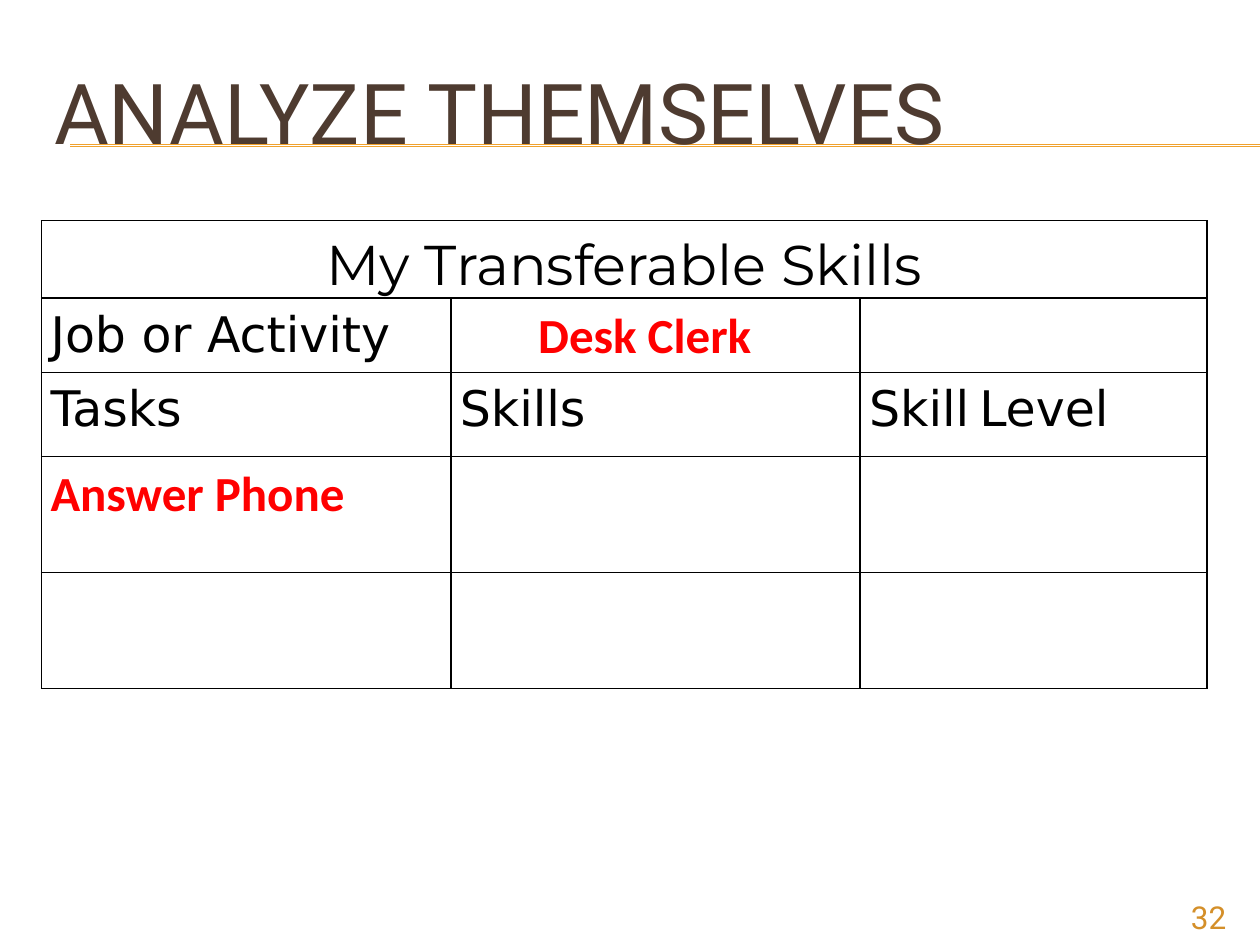
from lxml import etree
from pptx import Presentation
from pptx import util as u
from pptx.dml.color import RGBColor
from pptx.enum import shapes, text
from pptx.oxml.ns import qn

BLACK, RED, GOLD = "000000", "FF0000", "F0A22E"
COLUMNS = [8.25, 8.25, 6.99]
ROWS = [1.56, 1.5, 1.69, 2.34, 2.34]
# (row, column): text, font, size, colour, bold, centred
CELLS = {
    (0, 0): ("My Transferable Skills", "Montserrat", 32, BLACK, False, True),
    (1, 0): ("Job or Activity", "DejaVu Sans", 28, BLACK, False, False),
    (1, 1): ("Desk Clerk", "Calibri", 28, RED, True, True),
    (2, 0): ("Tasks", "DejaVu Sans", 28, BLACK, False, False),
    (2, 1): ("Skills", "DejaVu Sans", 28, BLACK, False, False),
    (2, 2): ("Skill", "DejaVu Sans", 28, BLACK, False, False),
    (3, 0): ("Answer Phone", "Calibri", 28, RED, True, False),
}


def rgb(value):
    return RGBColor.from_string(value)


def style(span, font, size, colour, bold=False):
    span.font.name = font
    span.font.size = u.Pt(size)
    span.font.color.rgb = rgb(colour)
    span.font.bold = bold


def add_text(page, wording, place, font, size, colour, align, anchor):
    box = page.shapes.add_textbox(*map(u.Cm, place))
    frame = box.text_frame
    frame.word_wrap = True
    frame.vertical_anchor = anchor
    frame.text = wording
    para = frame.paragraphs[0]
    para.alignment = align
    style(para.runs[0], font, size, colour)


def add_rule(page, y):
    line = page.shapes.add_connector(
        shapes.MSO_CONNECTOR.STRAIGHT, u.Cm(1.42), u.Cm(y), u.Cm(25.4), u.Cm(y))
    line.line.color.rgb = rgb(GOLD)
    line.line.width = u.Pt(0.75)
    etree.SubElement(line._element.spPr, qn("a:effectLst"))


def add_borders(cell):
    properties = cell._tc.get_or_add_tcPr()
    for position, side in enumerate(("lnL", "lnR", "lnT", "lnB")):
        border = etree.Element(qn(f"a:{side}"), w=str(u.Pt(1)))
        fill = etree.SubElement(border, qn("a:solidFill"))
        etree.SubElement(fill, qn("a:srgbClr"), val=BLACK)
        properties.insert(position, border)


def fill_cell(cell, wording, font, size, colour, bold, centred):
    cell.text_frame.text = wording
    para = cell.text_frame.paragraphs[0]
    para.line_spacing = 1.15
    para.alignment = text.PP_ALIGN.CENTER if centred else text.PP_ALIGN.LEFT
    style(para.runs[0], font, size, colour, bold)


def add_skills_table(page):
    table = page.shapes.add_table(
        len(ROWS), len(COLUMNS), u.Cm(0.84), u.Cm(4.45),
        u.Cm(sum(COLUMNS)), u.Cm(sum(ROWS))).table
    table.first_row = table.horz_banding = False
    for column, width in zip(table.columns, COLUMNS):
        column.width = u.Cm(width)
    for row, height in zip(table.rows, ROWS):
        row.height = u.Cm(height)
    for cell in table.iter_cells():
        cell.fill.background()
        cell.margin_left = cell.margin_right = u.Cm(0.18)
        cell.margin_top = cell.margin_bottom = 0
        add_borders(cell)
    table.cell(0, 0).merge(table.cell(0, 2))
    for (row, column), content in CELLS.items():
        fill_cell(table.cell(row, column), *content)

    # The job name sits a little left of the middle
    table.cell(1, 1).margin_right = u.Cm(0.62)
    # The last heading has a narrower space between its words
    heading = table.cell(2, 2).text_frame.paragraphs[0]
    for wording, size in ((" ", 18), ("Level", 28)):
        span = heading.add_run()
        span.text = wording
        style(span, "DejaVu Sans", size, BLACK)


def main():
    deck = Presentation()
    deck.slide_width, deck.slide_height = u.Cm(25.4), u.Cm(19.05)
    page = deck.slides.add_slide(deck.slide_layouts[6])
    for y in (2.92, 2.95):
        add_rule(page, y)
    add_text(page, "ANALYZE THEMSELVES", (0.84, 1.07, 24.13, 2.34), "Roboto", 48,
             "4E3B30", text.PP_ALIGN.LEFT, text.MSO_ANCHOR.MIDDLE)
    add_skills_table(page)
    add_text(page, "32", (22.86, 17.98, 2.11, 0.69), "Roboto", 18,
             "D48F29", text.PP_ALIGN.RIGHT, text.MSO_ANCHOR.TOP)
    deck.save("out.pptx")


if __name__ == "__main__":
    main()
